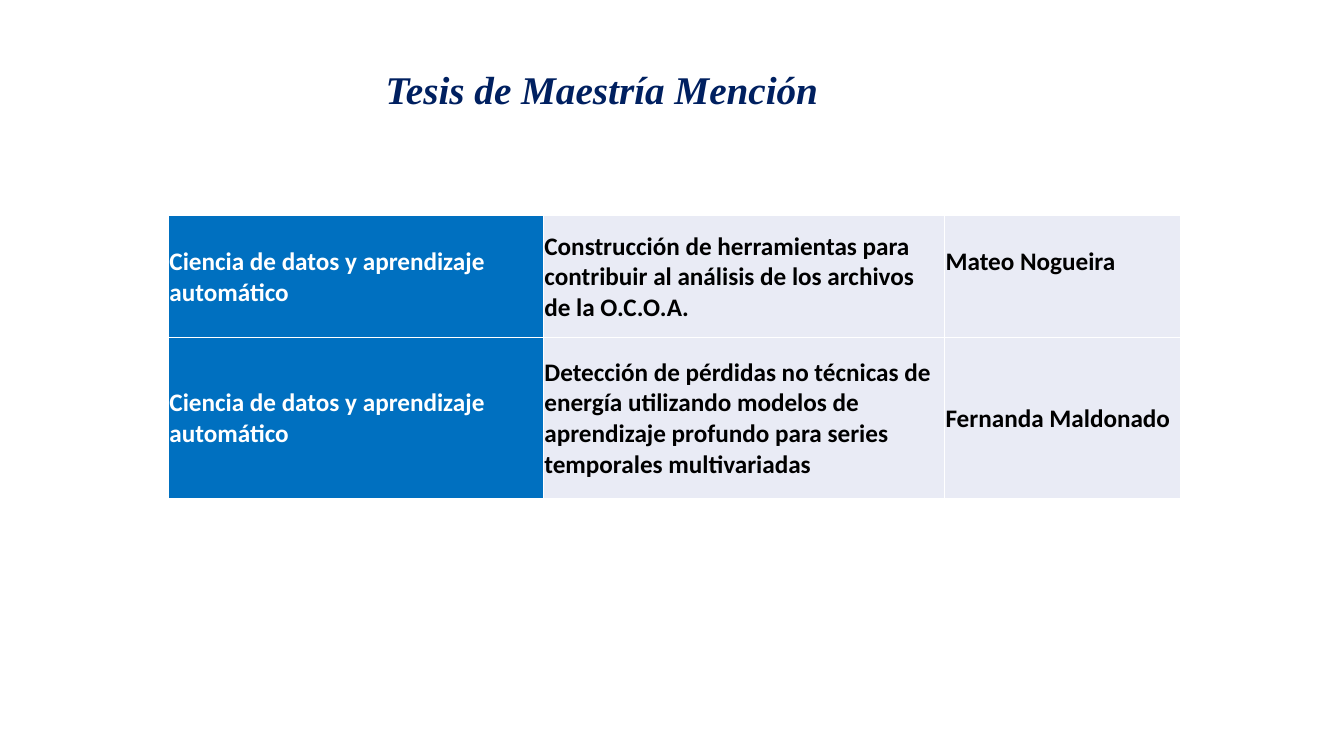
from lxml.etree import SubElement
from pptx import Presentation
from pptx.dml.color import RGBColor
from pptx.enum.text import MSO_ANCHOR
from pptx.oxml.ns import qn
from pptx.util import Cm, Pt

FIELD = "Ciencia de datos y aprendizaje automático"
THESES = [
    (FIELD,
     "Construcción de herramientas para contribuir al análisis de los archivos de la O.C.O.A.",
     "Mateo Nogueira"),
    (FIELD,
     "Detección de pérdidas no técnicas de energía utilizando modelos de "
     "aprendizaje profundo para series temporales multivariadas",
     "Fernanda Maldonado"),
]
WIDTHS = (9.45, 10.11, 5.94)
HEIGHTS = (3.07, 4.06)


def paint(color, value):
    color.rgb = RGBColor.from_string(value)


def style(frame, face, size, color, slant=False):
    for para in frame.paragraphs:
        for run in para.runs:
            font = run.font
            font.name, font.size = face, Pt(size)
            font.bold, font.italic = True, slant
            paint(font.color, color)


def add_title(slide, text):
    box = slide.shapes.add_textbox(Cm(2.72), Cm(0.64), Cm(28.42), Cm(2.31))
    frame = box.text_frame
    frame.word_wrap = True
    frame.vertical_anchor = MSO_ANCHOR.BOTTOM
    frame.margin_left = Cm(7)
    frame.text = text
    style(frame, "Times New Roman", 28, "002060", slant=True)


def add_edges(cell, color):
    props = cell._tc.get_or_add_tcPr()
    for i, side in enumerate(("a:lnL", "a:lnR", "a:lnT", "a:lnB")):
        line = SubElement(props, qn(side), w=str(Pt(1)))
        props.insert(i, line)  # borders come before the fill
        fill = SubElement(line, qn("a:solidFill"))
        SubElement(fill, qn("a:srgbClr"), val=color)


def fill_cell(cell, text, back, ink):
    cell.text_frame.text = text
    style(cell.text_frame, "Calibri", 18, ink)
    cell.vertical_anchor = MSO_ANCHOR.MIDDLE
    cell.margin_left = cell.margin_right = cell.margin_top = Cm(0.02)
    cell.margin_bottom = 0
    cell.fill.solid()
    paint(cell.fill.fore_color, back)
    add_edges(cell, "FFFFFF")


def add_grid(slide, rows):
    frame = slide.shapes.add_table(len(rows), len(WIDTHS), Cm(4.25), Cm(5.44),
                                   Cm(sum(WIDTHS)), Cm(sum(HEIGHTS)))
    table = frame.table
    for col, width in zip(table.columns, WIDTHS):
        col.width = Cm(width)
    for row, height in zip(table.rows, HEIGHTS):
        row.height = Cm(height)
    for r, texts in enumerate(rows):
        for c, text in enumerate(texts):
            back, ink = ("E9EBF5", "000000") if c else ("0070C0", "FFFFFF")
            fill_cell(table.cell(r, c), text, back, ink)
    # The first author sits level with the upper line of the field
    table.cell(0, 2).margin_bottom = Cm(0.76)


def main():
    deck = Presentation()
    deck.slide_width, deck.slide_height = Cm(33.87), Cm(19.05)
    slide = deck.slides.add_slide(deck.slide_layouts[6])
    # Heading
    add_title(slide, "Tesis de Maestría Mención")
    # Theses by field, topic and author
    add_grid(slide, THESES)
    deck.save("out.pptx")


if __name__ == "__main__":
    main()
